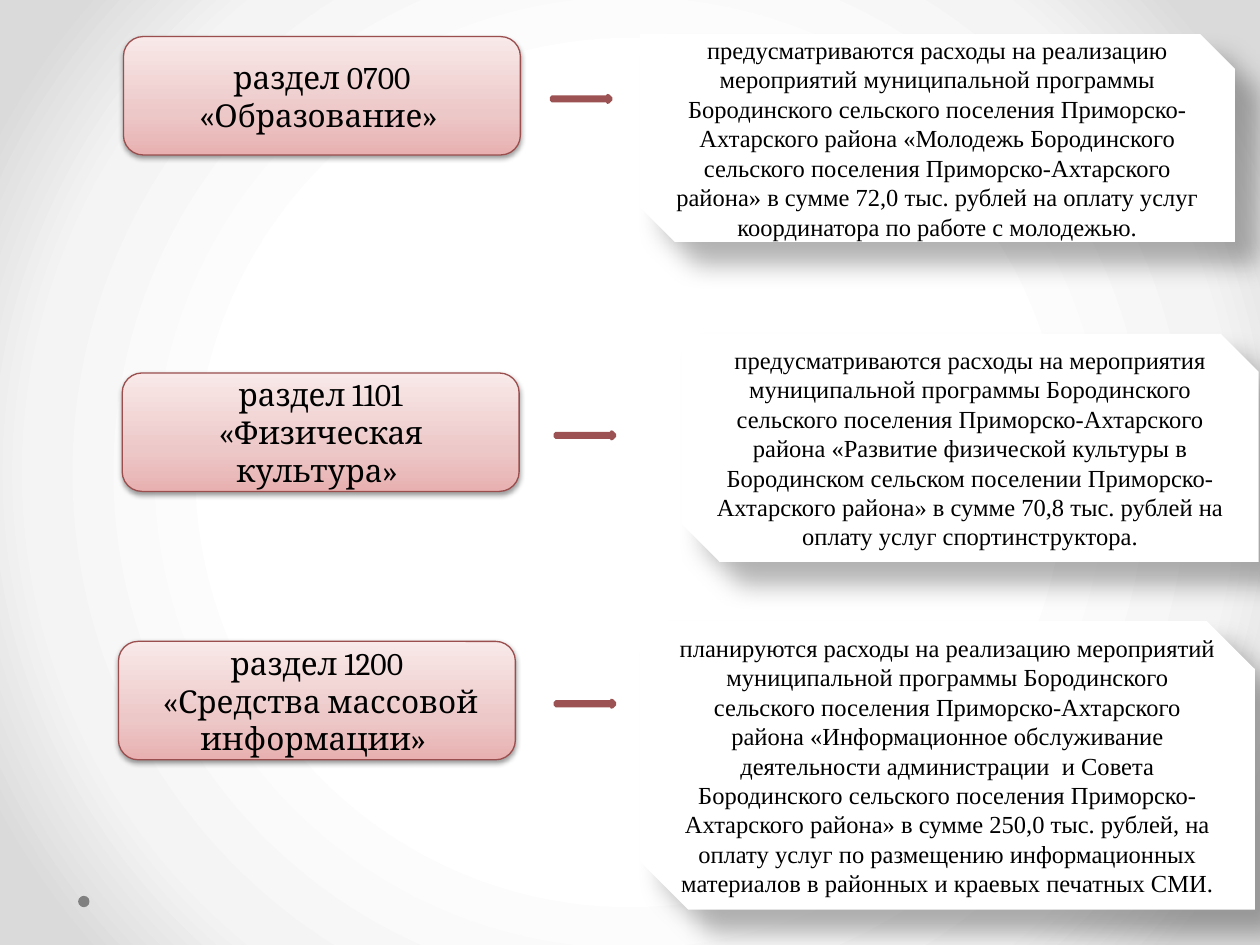
from pptx import Presentation
from pptx import util as u
from pptx.dml.color import RGBColor
from pptx.enum import shapes, text
from pptx.oxml import parse_xml
from pptx.oxml.ns import nsdecls, qn

WIDE, HIGH = u.Inches(10), u.Inches(7.5)
HUES = {"ink": "000000", "paper": "FFFFFF", "edge": "9A4E4E",
        "arrow": "9C5252", "dot": "808080"}
PINK = [(0, "E8B0B0"), (35, "EDC8C8"), (100, "F9E9E9")]
GREY = [(50, "FFFFFF"), (76, "F4F4F4"), (92, "DADADA")]
RISE = '<a:lin ang="16200000" scaled="0"/>'
ROUND = ('<a:path path="circle"><a:fillToRect l="50000" t="50000" '
         'r="50000" b="50000"/></a:path>')
LABEL = {"w": 31.5, "h": 12.53}
ARROW = {"w": 4.7, "h": 0.67}

# Label lines, label corner, arrow left, card box (shares in percent), card text
ROWS = [
    (["раздел 0700 «Образование» "], (9.8, 3.87), 43.8,
     (50.8, 3.6, 47.2, 22),
     "предусматриваются расходы на реализацию мероприятий муниципальной "
     "программы Бородинского сельского поселения Приморско-Ахтарского района "
     "«Молодежь Бородинского сельского поселения Приморско-Ахтарского района» "
     "в сумме 72,0 тыс. рублей на оплату услуг координатора по работе с "
     "молодежью."),
    (["раздел 1101 «Физическая культура» "], (9.7, 39.47), 44.1,
     (54.1, 35.33, 45.8, 24.13),
     "предусматриваются расходы на мероприятия муниципальной программы "
     "Бородинского сельского поселения Приморско-Ахтарского района «Развитие "
     "физической культуры в Бородинском сельском поселении "
     "Приморско-Ахтарского района» в сумме 70,8 тыс. рублей на оплату услуг "
     "спортинструктора."),
    (["раздел 1200", " «Средства массовой информации» "], (9.4, 67.87), 44.1,
     (50.8, 65.73, 48.8, 30.53),
     "планируются расходы на реализацию мероприятий муниципальной программы "
     "Бородинского сельского поселения Приморско-Ахтарского района "
     "«Информационное обслуживание деятельности администрации  и Совета "
     "Бородинского сельского поселения Приморско-Ахтарского района» в сумме "
     "250,0 тыс. рублей, на оплату услуг по размещению информационных "
     "материалов в районных и краевых печатных СМИ."),
]


def rgb(name):
    return RGBColor.from_string(HUES[name])


def blend(fill_home, stops, form):
    """Swap the solid fill inside fill_home for a gradient."""
    marks = "".join(f'<a:gs pos="{pos * 1000}"><a:srgbClr val="{hue}"/></a:gs>'
                    for pos, hue in stops)
    grad = parse_xml(f'<a:gradFill {nsdecls("a")} rotWithShape="1">'
                     f'<a:gsLst>{marks}</a:gsLst>{form}</a:gradFill>')
    fill_home.replace(fill_home.find(qn("a:solidFill")), grad)


def shade(shape, alpha, blur, dist, angle):
    """Add an outer shadow: percent, points, points, degrees."""
    shape._element.spPr.find(qn("a:effectLst")).append(parse_xml(
        f'<a:outerShdw {nsdecls("a")} blurRad="{u.Pt(blur)}" '
        f'dist="{u.Pt(dist)}" dir="{angle * 60000}" algn="tl" '
        f'rotWithShape="0"><a:srgbClr val="{HUES["ink"]}">'
        f'<a:alpha val="{alpha * 1000}"/></a:srgbClr></a:outerShdw>'))


def block(slide, kind, x, y, w, h, fill="paper", line=None, thick=0.75):
    """Draw a preset shape; x, y, w, h are percent of the slide."""
    shape = slide.shapes.add_shape(
        kind, int(WIDE * x / 100), int(HIGH * y / 100),
        int(WIDE * w / 100), int(HIGH * h / 100))
    shape.fill.solid()
    shape.fill.fore_color.rgb = rgb(fill)
    if line:
        shape.line.color.rgb = rgb(line)
        shape.line.width = u.Pt(thick)
    else:
        shape.line.fill.background()
    shape.shadow.inherit = False
    return shape


def write(shape, lines, font, size, hue="ink"):
    frame = shape.text_frame
    frame.word_wrap = True
    frame.vertical_anchor = text.MSO_ANCHOR.MIDDLE
    for num, line in enumerate(lines):
        para = frame.add_paragraph() if num else frame.paragraphs[0]
        para.alignment = text.PP_ALIGN.CENTER
        run = para.add_run()
        run.text = line
        run.font.name = font
        run.font.size = u.Pt(size)
        run.font.color.rgb = rgb(hue)


def label(slide, x, y, lines):
    shape = block(slide, shapes.MSO_SHAPE.ROUNDED_RECTANGLE, x, y, **LABEL,
                  line="edge")
    blend(shape._element.spPr, PINK, RISE)
    shade(shape, 38, 3.1, 1.6, 90)
    write(shape, lines, "Cambria", 18)


def card(slide, box, words):
    shape = block(slide, shapes.MSO_SHAPE.SNIP_2_DIAG_RECTANGLE, *box)
    shade(shape, 30, 15, 18, 45)
    write(shape, [words], "Times New Roman", 14)


def arrow(slide, x, y):
    block(slide, shapes.MSO_SHAPE.RIGHT_ARROW, x, y, **ARROW,
          line="arrow", thick=2.25)


def main():
    deck = Presentation()
    deck.slide_width, deck.slide_height = WIDE, HIGH
    slide = deck.slides.add_slide(deck.slide_layouts[6])
    slide.background.fill.solid()
    blend(slide._element.cSld.bg.bgPr, GREY, ROUND)
    block(slide, shapes.MSO_SHAPE.OVAL, 6.2, 94.8, 0.9, 1.2, fill="dot")
    for lines, (x, y), tail, box, words in ROWS:
        label(slide, x, y, lines)
        card(slide, box, words)
        arrow(slide, tail, y + LABEL["h"] / 2)
    deck.save("out.pptx")


if __name__ == "__main__":
    main()
